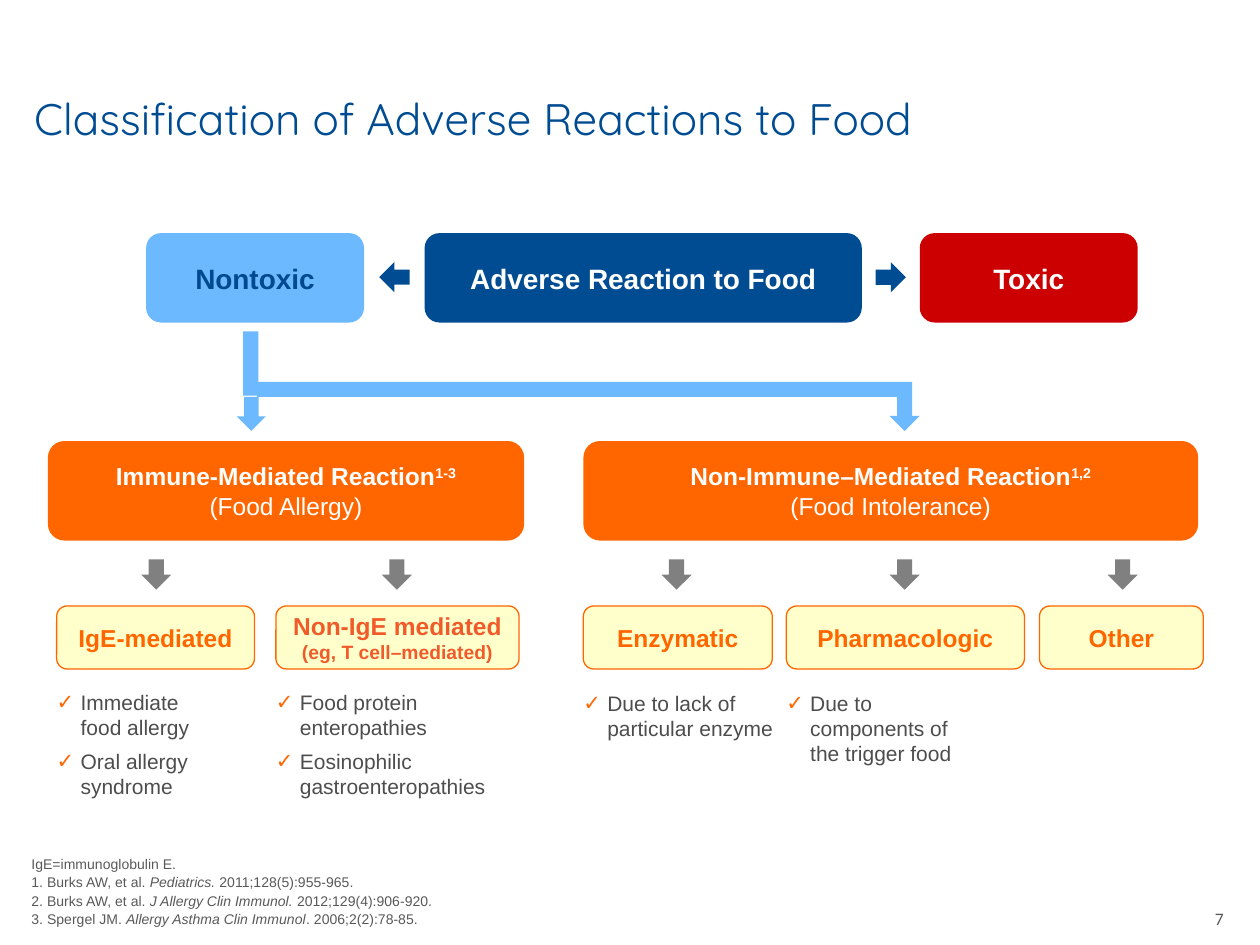
import pptx
import pptx.util
import pptx.dml.color
import pptx.enum.shapes
import pptx.enum.text
import pptx.oxml
import lxml.etree

WIDTH, HEIGHT, COLS, ROWS = 10, 7.5, 100, 75
SHAPE = pptx.enum.shapes.MSO_SHAPE
ALIGN = pptx.enum.text.PP_ALIGN
ANCHOR = pptx.enum.text.MSO_ANCHOR
NAVY, SKY, RED = "004C92", "6DB9FF", "CC0000"
ORANGE, CREAM, GRAY, WHITE = "FF6600", "FFFFCC", "808080", "FFFFFF"


def rgb(value):
    """Turn a hex string into a colour."""
    return pptx.dml.color.RGBColor.from_string(value)


def grid(col, row, cols, rows):
    """Turn grid columns and rows into left, top, width and height."""
    x, y = WIDTH / COLS, HEIGHT / ROWS
    return [pptx.util.Inches(v) for v in (col * x, row * y, cols * x, rows * y)]


def add_run(p, text, size, color, font="Arial", bold=False, italic=False, base=0):
    """Add one formatted run to a paragraph."""
    r = p.add_run()
    r.text = text
    r.font.size = pptx.util.Pt(size)
    r.font.name = font
    r.font.bold = bold
    r.font.italic = italic
    r.font.color.rgb = rgb(color)
    if base:
        r.font._element.set("baseline", str(base * 1000))


def write(sp, paragraphs, align=ALIGN.LEFT, anchor=ANCHOR.TOP, inset=(0, 0),
          wrap=True, spacing=1, after=0, **style):
    """Fill a shape with paragraphs, each a list of (text, style changes)."""
    tf = sp.text_frame
    tf.word_wrap = wrap
    tf.auto_size = pptx.enum.text.MSO_AUTO_SIZE.NONE
    tf.vertical_anchor = anchor
    tf.margin_left = tf.margin_right = pptx.util.Inches(inset[0])
    tf.margin_top = tf.margin_bottom = pptx.util.Inches(inset[1])
    for i, runs in enumerate(paragraphs):
        p = tf.add_paragraph() if i else tf.paragraphs[0]
        p.alignment = align
        p.line_spacing = spacing
        p.space_before = pptx.util.Pt(0)
        p.space_after = pptx.util.Pt(after)
        for text, changes in runs:
            for j, line in enumerate(text.split("\n")):
                if j:
                    p.add_line_break()
                add_run(p, line, **{**style, **changes})


def add_block(s, kind, place, fill, line=None, rotation=0):
    """Add a filled preset shape without shadow."""
    sp = s.shapes.add_shape(kind, *grid(*place))
    sp.shadow.inherit = False
    sp.rotation = rotation
    sp.fill.solid()
    sp.fill.fore_color.rgb = rgb(fill)
    if line:
        sp.line.color.rgb = rgb(line)
        sp.line.width = pptx.util.Pt(0.75)
    else:
        sp.line.fill.background()
    return sp


def add_box(s, place, fill, paragraphs, size, color, line=None):
    """Add a rounded box with centred bold text."""
    sp = add_block(s, SHAPE.FLOWCHART_ALTERNATE_PROCESS, place, fill, line)
    write(sp, paragraphs, align=ALIGN.CENTER, anchor=ANCHOR.MIDDLE, inset=(0.1, 0.05),
          wrap=False, size=size, color=color, bold=True)


def add_arrow(s, col, row, fill, cols=2.4, rows=2.4, rotation=0):
    """Add a block arrow that points down unless rotated."""
    add_block(s, SHAPE.DOWN_ARROW, (col, row, cols, rows), fill, rotation=rotation)


def place_placeholder(sp, place):
    """Move a placeholder to its grid cells."""
    sp.left, sp.top, sp.width, sp.height = grid(*place)


def fill_list(sp, place, items):
    """Turn a body placeholder into a check-marked list."""
    place_placeholder(sp, place)
    write(sp, [[(item, {})] for item in items], after=5, size=12, color="4D4D4D")
    indent = pptx.util.Inches(0.19)
    for p in sp.text_frame.paragraphs:
        pPr = p._p.get_or_add_pPr()
        pPr.set("marL", str(indent))
        pPr.set("indent", str(-indent))
        clr = lxml.etree.SubElement(pPr, pptx.oxml.ns.qn("a:buClr"))
        lxml.etree.SubElement(clr, pptx.oxml.ns.qn("a:srgbClr")).set("val", ORANGE)
        lxml.etree.SubElement(pPr, pptx.oxml.ns.qn("a:buChar")).set("char", "✓")


def add_note(s, place, paragraphs, **style):
    """Add a plain text box."""
    write(s.shapes.add_textbox(*grid(*place)), paragraphs, color="595959", **style)


def add_top_level(s):
    """Add the toxic and nontoxic split and the branch below it."""
    for col, cols, fill, color, text in (
            (11.6, 17.3, SKY, "004990", "Nontoxic"),
            (33.7, 34.7, NAVY, WHITE, "Adverse Reaction to Food"),
            (73, 17.3, RED, WHITE, "Toxic")):
        add_box(s, (col, 18.5, cols, 7.1), fill, [[(text, {})]], 16, color)
    add_arrow(s, 30.1, 20.8, NAVY, rotation=90)
    add_arrow(s, 69.5, 20.8, NAVY, rotation=270)
    for place in ((20.4, 30.3, 50.8, 1.2), (19.3, 26.3, 1.2, 5.1)):
        add_block(s, SHAPE.RECTANGLE, place, SKY)
    add_arrow(s, 18.8, 31.5, SKY, 2.3, 2.7)
    add_arrow(s, 70.6, 30.3, SKY, rows=3.9)


def add_reactions(s):
    """Add the two reaction classes."""
    for col, cols, name, refs, common in (
            (3.8, 37.8, "Immune-Mediated Reaction", "1-3", "(Food Allergy)"),
            (46.3, 48.8, "Non-Immune–Mediated Reaction", "1,2", "(Food Intolerance)")):
        text = [[(name, {}), (refs, {"base": 30})], [(common, {"bold": False})]]
        add_box(s, (col, 35, cols, 7.9), ORANGE, text, 14, WHITE)


def add_types(s):
    """Add the reaction types with an arrow above each and lists below."""
    types = (
        (4.5, 15.7, 11.2, ORANGE, [[("IgE-mediated", {})]]),
        (21.9, 19.3, 30.3, "F15A2A",
         [[("Non-IgE mediated", {})], [("(eg, T cell–mediated)", {"size": 11})]]),
        (46.3, 15, 52.5, ORANGE, [[("Enzymatic", {})]]),
        (62.4, 18.9, 70.6, ORANGE, [[("Pharmacologic", {})]]),
        (82.5, 13, 87.9, ORANGE, [[("Other", {})]]))
    for col, cols, arrow_col, color, text in types:
        add_box(s, (col, 48.1, cols, 5), CREAM, text, 14, color, ORANGE)
        add_arrow(s, arrow_col, 44.4, GRAY)
    lists = (
        (15.7, 54.7, 9.1, ["Immediate\nfood allergy", "Oral allergy\nsyndrome"]),
        (18.9, 54.7, 9.1, ["Food protein\nenteropathies", "Eosinophilic\ngastroenteropathies"]),
        (15.7, 54.8, 4, ["Due to lack of particular enzyme"]),
        (14.7, 54.8, 6.1, ["Due to components of the trigger food"]))
    bodies = list(s.placeholders)[1:]
    for sp, kind, (cols, row, rows, items) in zip(bodies, types, lists):
        fill_list(sp, (kind[0], row, cols, rows), items)


def add_notes(s):
    """Add the references and the slide number."""
    refs = (("1. Burks AW, et al. ", "Pediatrics. ", "2011;128(5):955-965."),
            ("2. Burks AW, et al. ", "J Allergy Clin Immunol. ", "2012;129(4):906-920."),
            ("3. Spergel JM. ", "Allergy Asthma Clin Immunol", ". 2006;2(2):78-85."))
    lines = [[("IgE=immunoglobulin E.", {})]]
    lines += [[(who, {}), (journal, {"italic": True}), (issue, {})]
              for who, journal, issue in refs]
    add_note(s, (2.5, 67.5, 72, 6.1), lines, anchor=ANCHOR.BOTTOM, spacing=1.1, size=8)
    add_note(s, (92.1, 71.6, 6, 2.7), [[("7", {})]], align=ALIGN.RIGHT,
             inset=(0.1, 0.05), size=10, font="Calibri")


def main():
    """Build the slide and save it."""
    prs = pptx.Presentation()
    prs.slide_width, prs.slide_height = pptx.util.Inches(WIDTH), pptx.util.Inches(HEIGHT)
    s = prs.slides.add_slide(prs.slide_layouts.get_by_name("Comparison"))
    place_placeholder(s.shapes.title, (2.7, 7.1, 93.7, 4.5))
    write(s.shapes.title, [[("Classification of Adverse Reactions to Food", {})]],
          anchor=ANCHOR.MIDDLE, size=25.2, color=NAVY, font="Quicksand")
    add_top_level(s)
    add_reactions(s)
    add_types(s)
    add_notes(s)
    prs.save("out.pptx")


if __name__ == "__main__":
    main()
